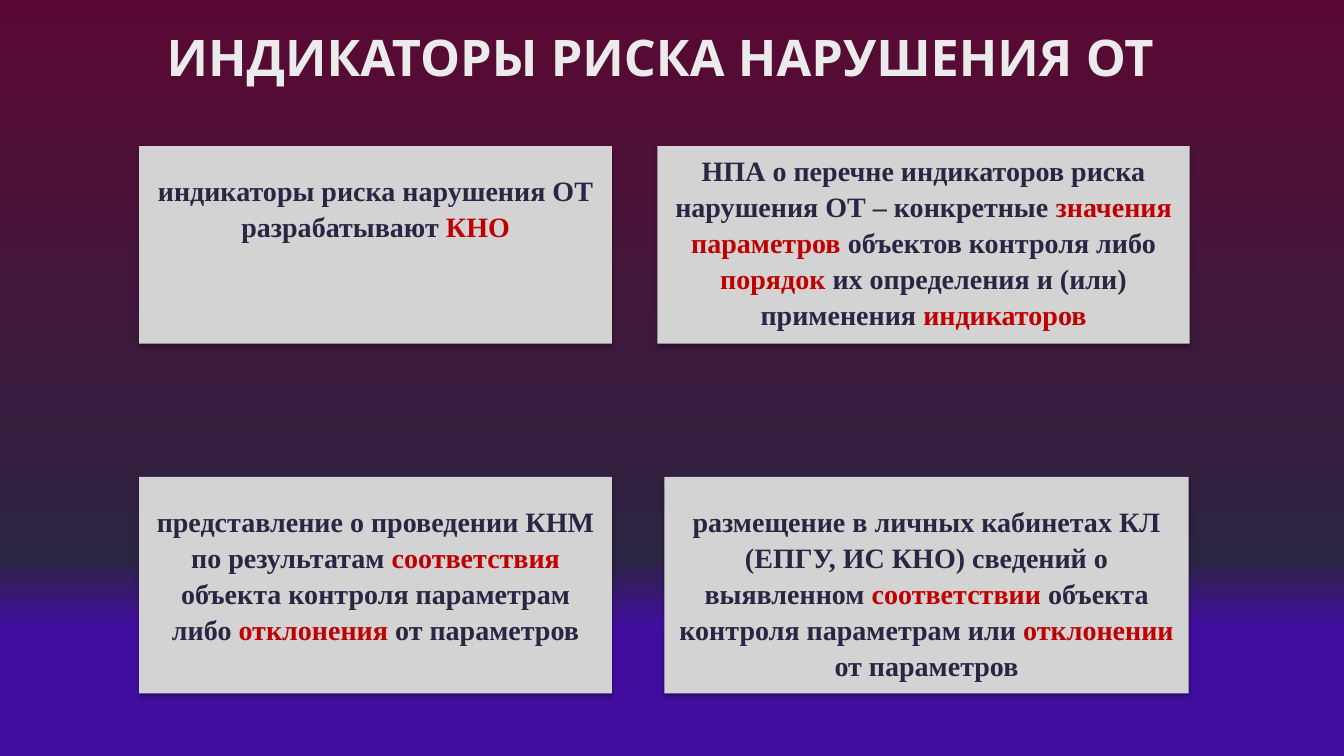
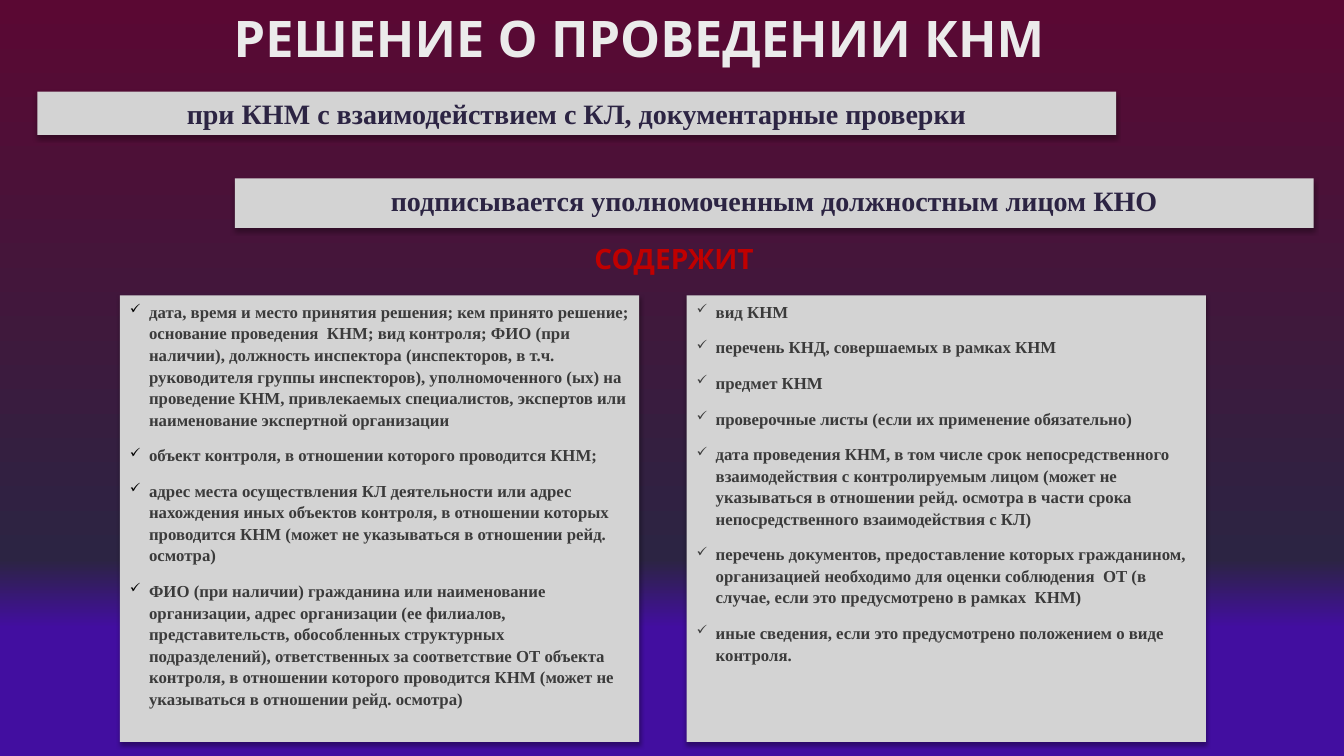
"""Build two slides on risk indicators and inspection decisions."""
import pptx
import pptx.dml.color
import pptx.enum.shapes
import pptx.enum.text
import pptx.oxml
import pptx.oxml.ns
import pptx.util

Inches = pptx.util.Inches
Pt = pptx.util.Pt
RGBColor = pptx.dml.color.RGBColor
ALIGN = pptx.enum.text.PP_ALIGN
ANCHOR = pptx.enum.text.MSO_ANCHOR
NAMESPACE = pptx.oxml.ns.nsdecls("a")

WINE = RGBColor(0x5A, 0x08, 0x33)
NAVY = RGBColor(0x2C, 0x24, 0x43)
VIOLET = RGBColor(0x42, 0x0E, 0xA0)
PANEL = RGBColor(0xD3, 0xD3, 0xD3)
LIGHT = RGBColor(0xEB, 0xEB, 0xEB)
GREY = RGBColor(0x3B, 0x3B, 0x3B)
RED = RGBColor(0xC0, 0x00, 0x00)
BLACK = RGBColor(0x00, 0x00, 0x00)

BACKGROUND_STOPS = [(0, WINE), (74, NAVY), (83, VIOLET), (100, VIOLET)]
TITLE_FONT = {"name": "League Spartan", "size": Pt(36), "bold": True}
LABEL_FONT = {**TITLE_FONT, "size": Pt(20)}
PANEL_FONT = {"name": "Times New Roman", "size": Pt(20), "bold": True}
LIST_FONT = {**PANEL_FONT, "size": Pt(12)}
CENTRED = {"alignment": ALIGN.CENTER}
PANEL_PARAGRAPH = {"alignment": ALIGN.CENTER, "line_spacing": 1.07}
LIST_PARAGRAPH = {"alignment": ALIGN.LEFT, "line_spacing": 1.07}


def add_panel(slide, box):
    """Add a grey rectangle with a soft shadow below it."""
    shape = slide.shapes.add_shape(
        pptx.enum.shapes.MSO_SHAPE.RECTANGLE, *map(Inches, box))
    shape.fill.solid()
    shape.fill.fore_color.rgb = PANEL
    shape.line.fill.background()
    shape.shadow.inherit = False
    effects = shape.element.spPr.find(pptx.oxml.ns.qn("a:effectLst"))
    effects.append(pptx.oxml.parse_xml(
        f'<a:outerShdw {NAMESPACE} blurRad="{Pt(3.5)}" dist="{Pt(2.2)}" dir="5400000" '
        f'rotWithShape="0"><a:srgbClr val="{BLACK}"><a:alpha val="32000"/></a:srgbClr>'
        '</a:outerShdw>'))
    shape.text_frame.vertical_anchor = ANCHOR.TOP
    return shape


def write_paragraph(paragraph, pieces, layout, font, color):
    """Write runs in which every second piece is red."""
    for name, value in layout.items():
        setattr(paragraph, name, value)
    for number, piece in enumerate(pieces):
        run = paragraph.add_run()
        run.text = piece
        for name, value in font.items():
            setattr(run.font, name, value)
        run.font.color.rgb = RED if number % 2 else color


presentation = pptx.Presentation()
presentation.slide_width = Inches(13.33)
presentation.slide_height = Inches(7.5)

headings = [
    [((0.88, 0.17, 11.34, 0.7), "ИНДИКАТОРЫ РИСКА НАРУШЕНИЯ ОТ", TITLE_FONT, LIGHT)],
    [((0.67, 0, 11.34, 0.68), "РЕШЕНИЕ О ПРОВЕДЕНИИ КНМ", TITLE_FONT, LIGHT),
     ((5.08, 2.36, 3.21, 0.38), "СОДЕРЖИТ", LABEL_FONT, RED)],
]
slides = []
for slide_headings in headings:
    slide = presentation.slides.add_slide(presentation.slide_layouts[6])
    slides.append(slide)
    fill = slide.background.fill
    fill.gradient()
    fill.gradient_angle = 270
    stops = slide.element.find(".//" + pptx.oxml.ns.qn("a:gsLst"))
    for stop in list(stops):
        stops.remove(stop)
    for position, color in BACKGROUND_STOPS:
        stops.append(pptx.oxml.parse_xml(
            f'<a:gs {NAMESPACE} pos="{position * 1000}"><a:srgbClr val="{color}"/></a:gs>'))
    for box, text, font, color in slide_headings:
        frame = slide.shapes.add_textbox(*map(Inches, box)).text_frame
        frame.word_wrap = True
        frame.vertical_anchor = ANCHOR.BOTTOM
        frame.margin_top = 0
        frame.margin_bottom = Inches(0.01)
        write_paragraph(frame.paragraphs[0], [text], CENTRED, font, color)
risk_slide, decision_slide = slides

risk_panels = [
    ((1.38, 1.45, 4.69, 1.96), 0.25,
     ["индикаторы риска нарушения ОТ разрабатывают ", "КНО"]),
    ((6.52, 1.45, 5.28, 1.96), 0.05,
     ["НПА о перечне индикаторов риска нарушения ОТ – конкретные ",
      "значения параметров", " объектов контроля либо ", "порядок",
      " их определения и (или) применения ", "индикаторов"]),
    ((1.38, 4.73, 4.69, 2.15), 0.25,
     ["представление о проведении КНМ по результатам ", "соответствия ",
      "объекта контроля параметрам либо ", "отклонения", " от параметров"]),
    ((6.59, 4.73, 5.2, 2.15), 0.25,
     ["размещение в личных кабинетах КЛ (ЕПГУ, ИС КНО) сведений о выявленном ",
      "соответствии", " объекта контроля параметрам или ", "отклонении ",
      "от параметров"]),
]
for box, top_margin, pieces in risk_panels:
    frame = add_panel(risk_slide, box).text_frame
    frame.margin_top = Inches(top_margin)
    write_paragraph(frame.paragraphs[0], pieces, PANEL_PARAGRAPH, PANEL_FONT, NAVY)

decision_bands = [
    ((0.37, 0.91, 10.7, 0.43), "при КНМ с взаимодействием с КЛ, документарные проверки"),
    ((2.33, 1.77, 10.7, 0.49), "подписывается уполномоченным должностным лицом КНО"),
]
for box, text in decision_bands:
    frame = add_panel(decision_slide, box).text_frame
    write_paragraph(frame.paragraphs[0], [text], CENTRED, PANEL_FONT, NAVY)

decision_lists = [
    (1.19, BLACK, [
        "дата, время и место принятия решения; кем принято решение; основание "
        "проведения  КНМ; вид контроля; ФИО (при наличии), должность инспектора "
        "(инспекторов, в т.ч. руководителя группы инспекторов), уполномоченного (ых) "
        "на проведение КНМ, привлекаемых специалистов, экспертов или наименование "
        "экспертной организации",
        "объект контроля, в отношении которого проводится КНМ;",
        "адрес места осуществления КЛ деятельности или адрес нахождения иных объектов "
        "контроля, в отношении которых проводится КНМ (может не указываться в "
        "отношении рейд. осмотра)",
        "ФИО (при наличии) гражданина или наименование организации, адрес организации "
        "(ее филиалов, представительств, обособленных структурных подразделений), "
        "ответственных за соответствие ОТ объекта контроля, в отношении которого "
        "проводится КНМ (может не указываться в отношении рейд. осмотра)",
    ]),
    (6.81, GREY, [
        "вид КНМ",
        "перечень КНД, совершаемых в рамках КНМ",
        "предмет КНМ",
        "проверочные листы (если их применение обязательно)",
        "дата проведения КНМ, в том числе срок непосредственного взаимодействия с "
        "контролируемым лицом (может не указываться в отношении рейд. осмотра в части "
        "срока непосредственного взаимодействия с КЛ)",
        "перечень документов, предоставление которых гражданином, организацией "
        "необходимо для оценки соблюдения  ОТ (в случае, если это предусмотрено в "
        "рамках  КНМ)",
        "иные сведения, если это предусмотрено положением о виде контроля.",
    ]),
]
for left, bullet_color, items in decision_lists:
    frame = add_panel(decision_slide, (left, 2.93, 5.15, 4.43)).text_frame
    for number, item in enumerate(items):
        paragraph = frame.add_paragraph() if number else frame.paragraphs[0]
        properties = paragraph._p.get_or_add_pPr()
        properties.set("marL", str(Inches(0.19)))
        properties.set("indent", str(Inches(-0.19)))
        for bullet in (f'<a:buClr {NAMESPACE}><a:srgbClr val="{bullet_color}"/></a:buClr>',
                       f'<a:buSzPct {NAMESPACE} val="80000"/>',
                       f'<a:buChar {NAMESPACE} char="✓"/>'):
            properties.append(pptx.oxml.parse_xml(bullet))
        write_paragraph(paragraph, [item], LIST_PARAGRAPH, LIST_FONT, GREY)
        if number:
            paragraph.space_before = Pt(10)

presentation.save("out.pptx")
